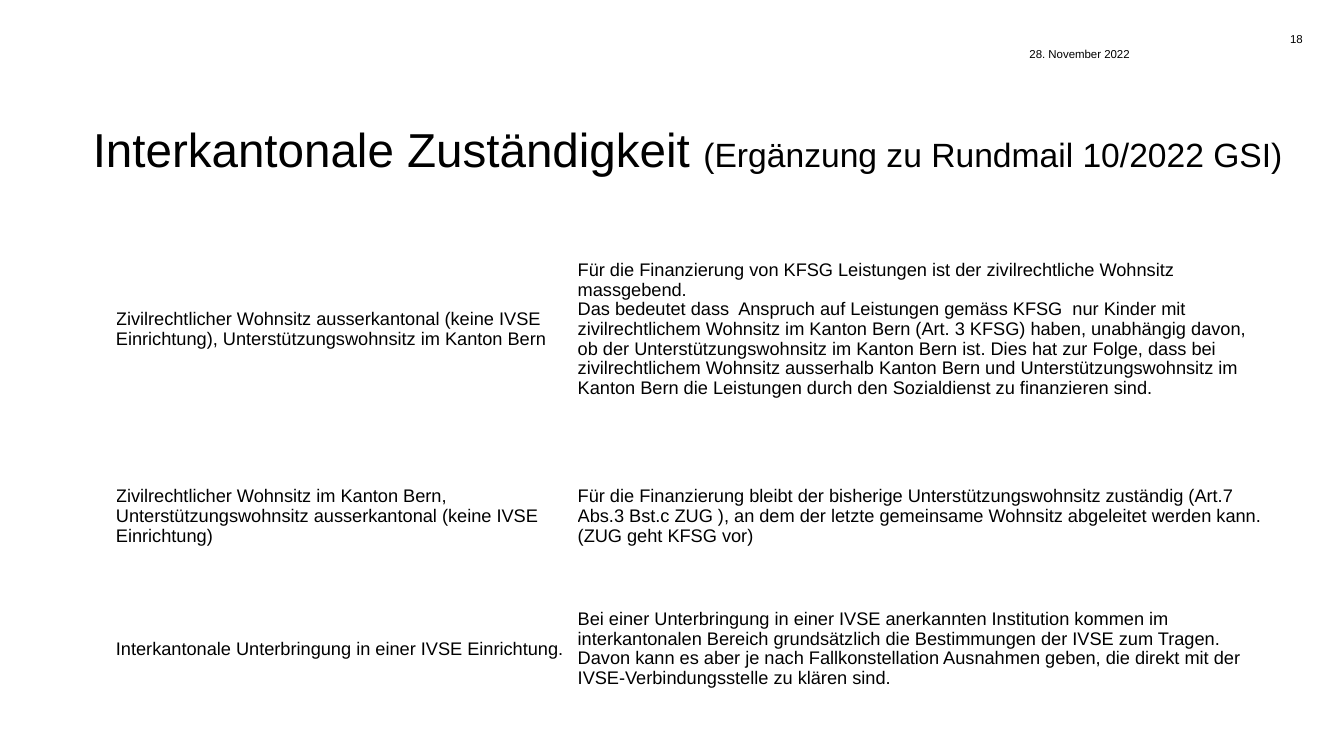
from pptx import Presentation
from pptx import util as u
from pptx.dml.color import RGBColor
from pptx.enum import text

PX = u.Inches(1) // 100
BLACK = RGBColor(0, 0, 0)
FONT = "Arial"

CASES = [
    (248, "Zivilrechtlicher Wohnsitz ausserkantonal (keine IVSE Einrichtung), "
          "Unterstützungswohnsitz im Kanton Bern",
     "Für die Finanzierung von KFSG Leistungen ist der zivilrechtliche Wohnsitz massgebend. \n"
     "Das bedeutet dass  Anspruch auf Leistungen gemäss KFSG  nur Kinder mit "
     "zivilrechtlichem Wohnsitz im Kanton Bern (Art. 3 KFSG) haben, unabhängig davon, "
     "ob der Unterstützungswohnsitz im Kanton Bern ist. Dies hat zur Folge, dass bei "
     "zivilrechtlichem Wohnsitz ausserhalb Kanton Bern und Unterstützungswohnsitz im "
     "Kanton Bern die Leistungen durch den Sozialdienst zu finanzieren sind."),
    (123, "Zivilrechtlicher Wohnsitz im Kanton Bern, Unterstützungswohnsitz "
          "ausserkantonal (keine IVSE Einrichtung)",
     "Für die Finanzierung bleibt der bisherige Unterstützungswohnsitz zuständig (Art.7 "
     "Abs.3 Bst.c ZUG ), an dem der letzte gemeinsame Wohnsitz abgeleitet werden kann. "
     "(ZUG geht KFSG vor)"),
    (140, "Interkantonale Unterbringung in einer IVSE Einrichtung.",
     "Bei einer Unterbringung in einer IVSE anerkannten Institution kommen im "
     "interkantonalen Bereich grundsätzlich die Bestimmungen der IVSE zum Tragen. "
     "Davon kann es aber je nach Fallkonstellation Ausnahmen geben, die direkt mit der "
     "IVSE-Verbindungsstelle zu klären sind."),
]


def scaled(box):
    """Turn a box in px into EMU lengths."""
    return [n * PX for n in box]


def write(p, words, size=13, align=text.PP_ALIGN.LEFT, spacing=1.0):
    """Append words to a paragraph, with a line break at each newline."""
    p.alignment = align
    p.line_spacing = spacing
    for i, line in enumerate(words.split("\n")):
        if i:
            p.add_line_break()
        r = p.add_run()
        r.text = line
        r.font.name = FONT
        r.font.size = u.Pt(size)
        r.font.color.rgb = BLACK


def clear_margins(holder):
    """Remove the inner margins of a text frame or a cell."""
    holder.margin_left = holder.margin_right = 0
    holder.margin_top = holder.margin_bottom = 0


def add_title(s, box):
    """Place the title with its smaller addition."""
    sp = s.shapes.title
    sp.left, sp.top, sp.width, sp.height = scaled(box)
    tf = sp.text_frame
    clear_margins(tf)
    tf.word_wrap = True
    tf.auto_size = text.MSO_AUTO_SIZE.NONE
    tf.vertical_anchor = text.MSO_ANCHOR.MIDDLE
    p = tf.paragraphs[0]
    write(p, "Interkantonale Zuständigkeit ", size=34, spacing=0.9)
    write(p, "(Ergänzung zu Rundmail 10/2022 GSI)", size=24, spacing=0.9)


def add_header(s, box, words, align):
    """Place a small header text."""
    tf = s.shapes.add_textbox(*scaled(box)).text_frame
    clear_margins(tf)
    tf.word_wrap = True
    write(tf.paragraphs[0], words, size=8.2, align=align)


def add_cases(s, box, split):
    """Place the table of cases, with its first column as wide as split."""
    table = s.shapes.add_table(len(CASES), 2, *scaled(box)).table
    table.first_row = table.horz_banding = False
    table.columns[0].width = split * PX
    table.columns[1].width = (box[2] - split) * PX
    for row, (height, *words) in zip(table.rows, CASES):
        row.height = height * PX
        for cell, content in zip(row.cells, words):
            cell.fill.background()
            clear_margins(cell)
            cell.vertical_anchor = text.MSO_ANCHOR.MIDDLE
            write(cell.text_frame.paragraphs[0], content, spacing=0.97)


def main():
    """Build and save the slide."""
    prs = Presentation()
    prs.slide_width, prs.slide_height = scaled((1333, 750))
    s = prs.slides.add_slide(prs.slide_layouts[5])
    add_title(s, (92, 117, 1201, 68))
    add_header(s, (1021, 47, 228, 12), "28. November 2022", text.PP_ALIGN.LEFT)
    add_header(s, (1257, 32, 35, 12), "18", text.PP_ALIGN.RIGHT)
    add_cases(s, (115, 203, 1142, 511), 458)
    prs.save("out.pptx")


if __name__ == "__main__":
    main()
